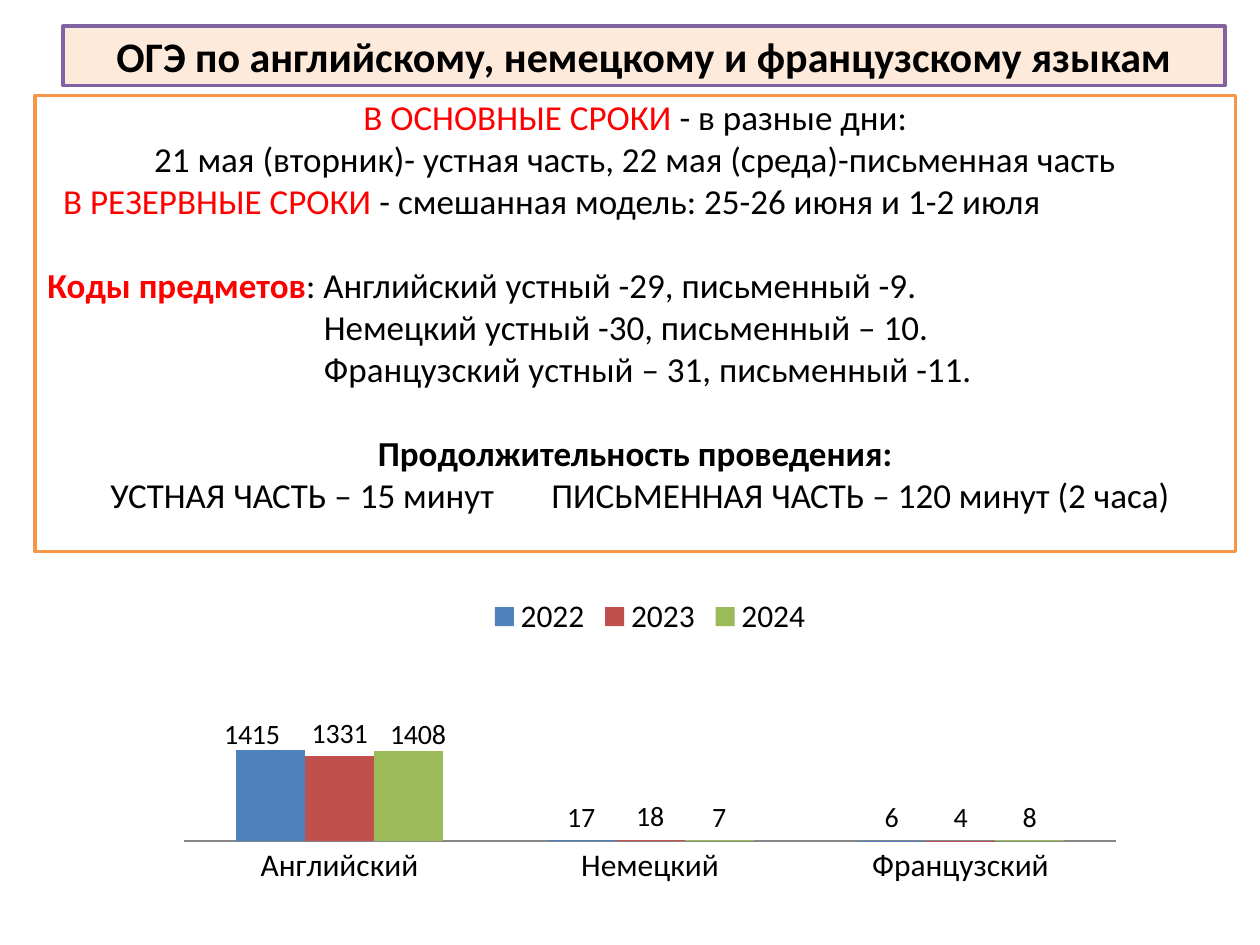
from dataclasses import dataclass

from lxml.etree import SubElement
from pptx import Presentation
from pptx.chart.data import CategoryChartData
from pptx.dml.color import RGBColor
from pptx.enum.chart import XL_CHART_TYPE, XL_LABEL_POSITION, XL_LEGEND_POSITION, XL_TICK_MARK
from pptx.enum.shapes import MSO_SHAPE
from pptx.enum.text import MSO_ANCHOR, MSO_AUTO_SIZE, PP_ALIGN
from pptx.oxml import parse_xml
from pptx.oxml.ns import nsdecls, qn
from pptx.util import Pt


@dataclass(frozen=True)
class Theme:
    font: str = "Calibri"
    black: str = "000000"
    red: str = "FF0000"
    white: str = "FFFFFF"
    peach: str = "FDEADA"
    purple: str = "8064A2"
    orange: str = "F79646"
    grey: str = "868686"
    bars: tuple = ("4F81BD", "C0504D", "9BBB59")
    title: int = 24
    body: int = 20
    axis: int = 18
    label: int = 16


THEME = Theme()
LINE = 24
NAMES = ("Английский", "Немецкий", "Французский")
YEARS = {"2022": (1415, 17, 6), "2023": (1331, 18, 4), "2024": (1408, 7, 8)}
SHIFTS = {"2022": (-0.02, 0.02), "2024": (0.01, 0.02)}


def apply(target, values):
    for name, value in values.items():
        setattr(target, name, value)


def style(font, size, color=THEME.black, bold=False):
    apply(font, {"name": THEME.font, "size": Pt(size), "bold": bold})
    font.color.rgb = RGBColor.from_string(color)


def frame(shape, fill, line, anchor):
    shape.fill.solid()
    shape.fill.fore_color.rgb = RGBColor.from_string(fill)
    shape.line.color.rgb = RGBColor.from_string(line)
    shape.line.width = Pt(2)
    shape.shadow.inherit = False
    apply(shape.text_frame, {
        "word_wrap": True, "auto_size": MSO_AUTO_SIZE.NONE, "vertical_anchor": anchor,
        "margin_left": Pt(7.2), "margin_right": Pt(7.2),
        "margin_top": 0, "margin_bottom": 0,
    })


def write(para, runs, size, align=PP_ALIGN.LEFT, gap=0, indent=0, tabs=()):
    apply(para, {"alignment": align, "space_before": Pt(gap)})
    props = para._p.get_or_add_pPr()
    props.set("marL", str(Pt(indent)))
    props.set("indent", "0")
    if tabs:
        stops = SubElement(props, qn("a:tabLst"))
        for stop in tabs:
            SubElement(stops, qn("a:tab"), pos=str(Pt(stop)), algn="l")
    for text, color, bold in runs:
        run = para.add_run()
        run.text = text
        style(run.font, size, color, bold)


def add_title(slide):
    title = slide.shapes.title
    apply(title, {"left": Pt(36), "top": Pt(15), "width": Pt(664), "height": Pt(34)})
    frame(title, THEME.peach, THEME.purple, MSO_ANCHOR.MIDDLE)
    runs = [("ОГЭ по английскому, немецкому и французскому языкам", THEME.black, True)]
    write(title.text_frame.paragraphs[0], runs, THEME.title, PP_ALIGN.CENTER)


def add_panel(slide, lines):
    panel = slide.shapes.add_shape(MSO_SHAPE.RECTANGLE, Pt(20), Pt(54.6), Pt(686), Pt(260.6))
    frame(panel, THEME.white, THEME.orange, MSO_ANCHOR.TOP)
    text = panel.text_frame
    for index, (runs, form) in enumerate(lines):
        para = text.add_paragraph() if index else text.paragraphs[0]
        write(para, runs, THEME.body, **form)


def place(plot, x, y, wide, high):
    for old in plot.findall(qn("c:layout")):
        plot.remove(old)
    plot.insert(0, parse_xml(
        f'<c:layout {nsdecls("c")}><c:manualLayout><c:layoutTarget val="inner"/>'
        f'<c:xMode val="edge"/><c:yMode val="edge"/><c:x val="{x}"/><c:y val="{y}"/>'
        f'<c:w val="{wide}"/><c:h val="{high}"/></c:manualLayout></c:layout>'))


def shift(label, node, x, y):
    label.position = XL_LABEL_POSITION.OUTSIDE_END
    style(label.font, THEME.label)
    node.find(".//" + qn("c:dLbl")).insert(1, parse_xml(
        f'<c:layout {nsdecls("c")}><c:manualLayout><c:x val="{x}"/><c:y val="{y}"/>'
        f'</c:manualLayout></c:layout>'))


def add_bars(slide):
    data = CategoryChartData()
    data.categories = NAMES
    for year, counts in YEARS.items():
        data.add_series(year, counts)
    chart = slide.shapes.add_chart(
        XL_CHART_TYPE.COLUMN_CLUSTERED, Pt(105), Pt(332.6), Pt(533), Pt(193), data).chart
    apply(chart, {"has_title": False, "has_legend": True})
    style(chart.font, THEME.axis)
    apply(chart.legend, {"position": XL_LEGEND_POSITION.TOP, "include_in_layout": False})
    apply(chart.value_axis, {
        "visible": False, "has_major_gridlines": False,
        "minimum_scale": 0, "maximum_scale": 1600,
    })
    axis = chart.category_axis
    apply(axis, {"major_tick_mark": XL_TICK_MARK.NONE, "minor_tick_mark": XL_TICK_MARK.NONE})
    axis.format.line.color.rgb = RGBColor.from_string(THEME.grey)
    place(chart._chartSpace.chart.plotArea, 0, 0.464, 1, 0.303)
    plot = chart.plots[0]
    apply(plot, {"gap_width": 150, "overlap": 0, "vary_by_categories": False})
    for series, color in zip(plot.series, THEME.bars):
        series.format.fill.solid()
        series.format.fill.fore_color.rgb = RGBColor.from_string(color)
        labels = series.data_labels
        apply(labels, {"show_value": True, "position": XL_LABEL_POSITION.OUTSIDE_END})
        style(labels.font, THEME.label)
        if series.name in SHIFTS:
            shift(series.points[0].data_label, series._element, *SHIFTS[series.name])


def main():
    deck = Presentation()
    apply(deck, {"slide_width": Pt(720), "slide_height": Pt(540)})
    slide = deck.slides.add_slide(deck.slide_layouts[5])
    black, red = THEME.black, THEME.red
    mid = {"align": PP_ALIGN.CENTER}
    add_title(slide)
    add_bars(slide)
    add_panel(slide, [
        ([("В ОСНОВНЫЕ СРОКИ ", red, False), ("- в разные дни:", black, False)], mid),
        ([("21 мая (вторник)- устная часть, 22 мая (среда)-письменная часть",
           black, False)], mid),
        ([("В РЕЗЕРВНЫЕ СРОКИ ", red, False),
          ("- смешанная модель: 25-26 июня и 1-2 июля", black, False)], {"indent": 9}),
        ([("Коды предметов", red, True),
          (": Английский устный -29, письменный -9.", black, False)], {"gap": LINE}),
        ([("Немецкий устный -30, письменный – 10.", black, False)], {"indent": 158}),
        ([("Французский устный – 31, письменный -11.", black, False)], {"indent": 158}),
        ([("Продолжительность проведения:", black, True)], {**mid, "gap": LINE}),
        ([("\tУСТНАЯ ЧАСТЬ – 15 минут\tПИСЬМЕННАЯ ЧАСТЬ – 120 минут (2 часа)",
           black, False)], {"tabs": (31, 287)}),
    ])
    deck.save("out.pptx")


if __name__ == "__main__":
    main()
